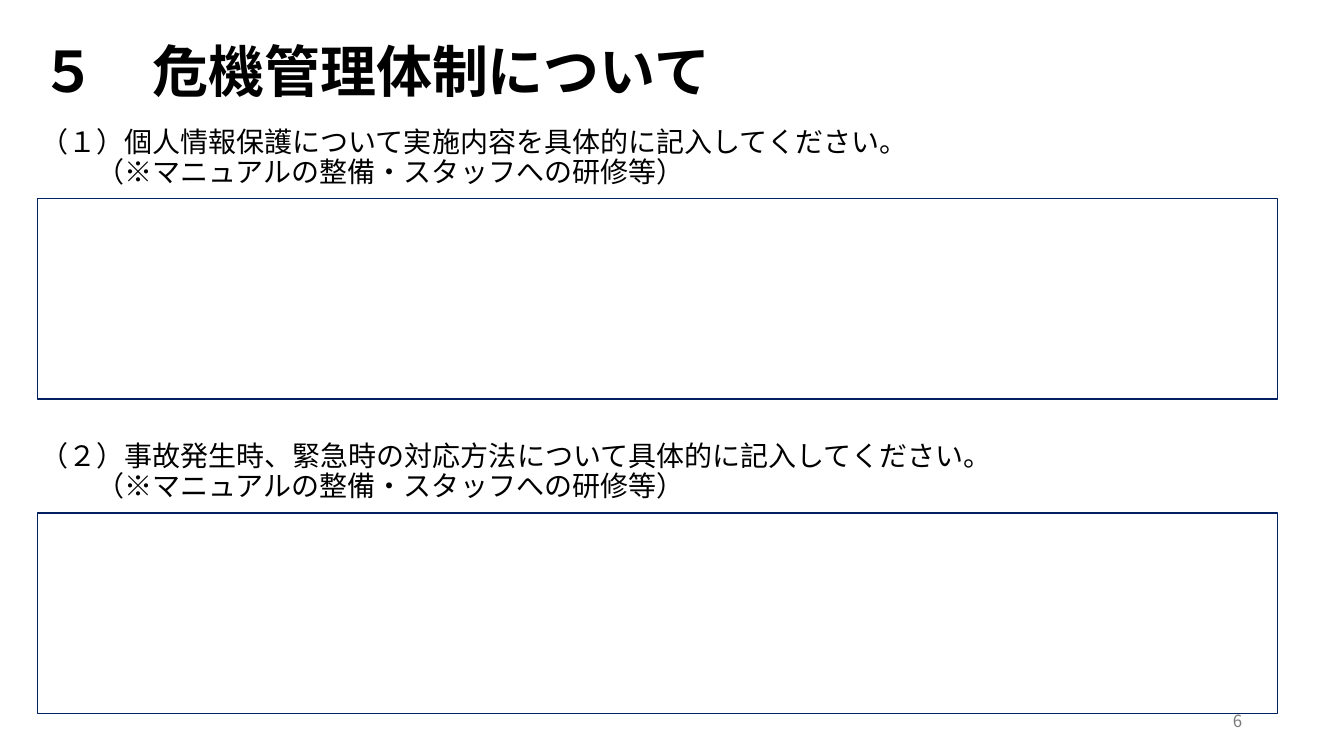
from lxml.etree import SubElement
from pptx import Presentation
from pptx.dml.color import RGBColor
from pptx.enum.shapes import MSO_SHAPE as Shape
from pptx.enum.text import MSO_ANCHOR as Anchor, MSO_AUTO_SIZE as AutoSize, PP_ALIGN as Align
from pptx.oxml.ns import qn
from pptx.util import Inches, Pt

COLORS = {"text": "000000", "box": "FFFFFF", "border": "002060", "number": "797979"}
FONT = "Noto Sans CJK JP"
LEFT, WIDTH = 0.3, 12.44


class SlideBuilder:
    def __init__(self, prs):
        self.s = prs.slides.add_slide(prs.slide_layouts[5])

    def color(self, name):
        return RGBColor.from_string(COLORS[name])

    def frame(self, sp):
        tf = sp.text_frame
        tf.word_wrap = True
        tf.auto_size = AutoSize.NONE
        tf.vertical_anchor = Anchor.MIDDLE
        return tf

    def add_text(self, p, text, size, color="text", bold=False, align=Align.LEFT, spacing=0.9):
        p.alignment = align
        p.line_spacing = spacing
        r = p.add_run()
        r.text = text
        r.font.size = Pt(size)
        r.font.bold = bold
        r.font.color.rgb = self.color(color)
        r.font.name = FONT
        SubElement(r.font._element, qn("a:ea")).set("typeface", FONT)

    def title(self, text, top, height):
        sp = self.s.shapes.title
        sp.left, sp.top = Inches(LEFT), Inches(top)
        sp.width, sp.height = Inches(WIDTH), Inches(height)
        self.add_text(self.frame(sp).paragraphs[0], text, 40, bold=True)

    def question(self, text, note, top):
        sp = self.s.shapes.add_textbox(Inches(LEFT), Inches(top), Inches(WIDTH), Inches(0.8))
        tf = self.frame(sp)
        self.add_text(tf.paragraphs[0], text, 20)
        p = tf.add_paragraph()
        self.add_text(p, note, 20)
        p._p.get_or_add_pPr().set("marL", str(Pt(40)))

    def answer_box(self, top):
        sp = self.s.shapes.add_shape(Shape.RECTANGLE, Inches(0.37), Inches(top),
                                     Inches(12.3), Inches(1.99))
        sp.shadow.inherit = False
        sp.fill.solid()
        sp.fill.fore_color.rgb = self.color("box")
        sp.line.color.rgb = self.color("border")
        sp.line.width = Pt(1)

    def page_number(self, number):
        sp = self.s.shapes.add_textbox(Inches(9.42), Inches(6.95), Inches(3), Inches(0.4))
        self.add_text(self.frame(sp).paragraphs[0], number, 12, "number",
                      align=Align.RIGHT, spacing=1.0)


def main():
    prs = Presentation()
    prs.slide_width, prs.slide_height = Inches(13.33), Inches(7.5)
    slide = SlideBuilder(prs)
    slide.title("５　危機管理体制について", 0.23, 1.02)
    questions = [
        "（１）個人情報保護について実施内容を具体的に記入してください。",
        "（２）事故発生時、緊急時の対応方法について具体的に記入してください。",
    ]
    for i, text in enumerate(questions):
        top = 1.17 + 3.12 * i
        slide.question(text, "（※マニュアルの整備・スタッフへの研修等）", top)
        slide.answer_box(top + 0.8)
    slide.page_number("6")
    prs.save("out.pptx")


if __name__ == "__main__":
    main()
